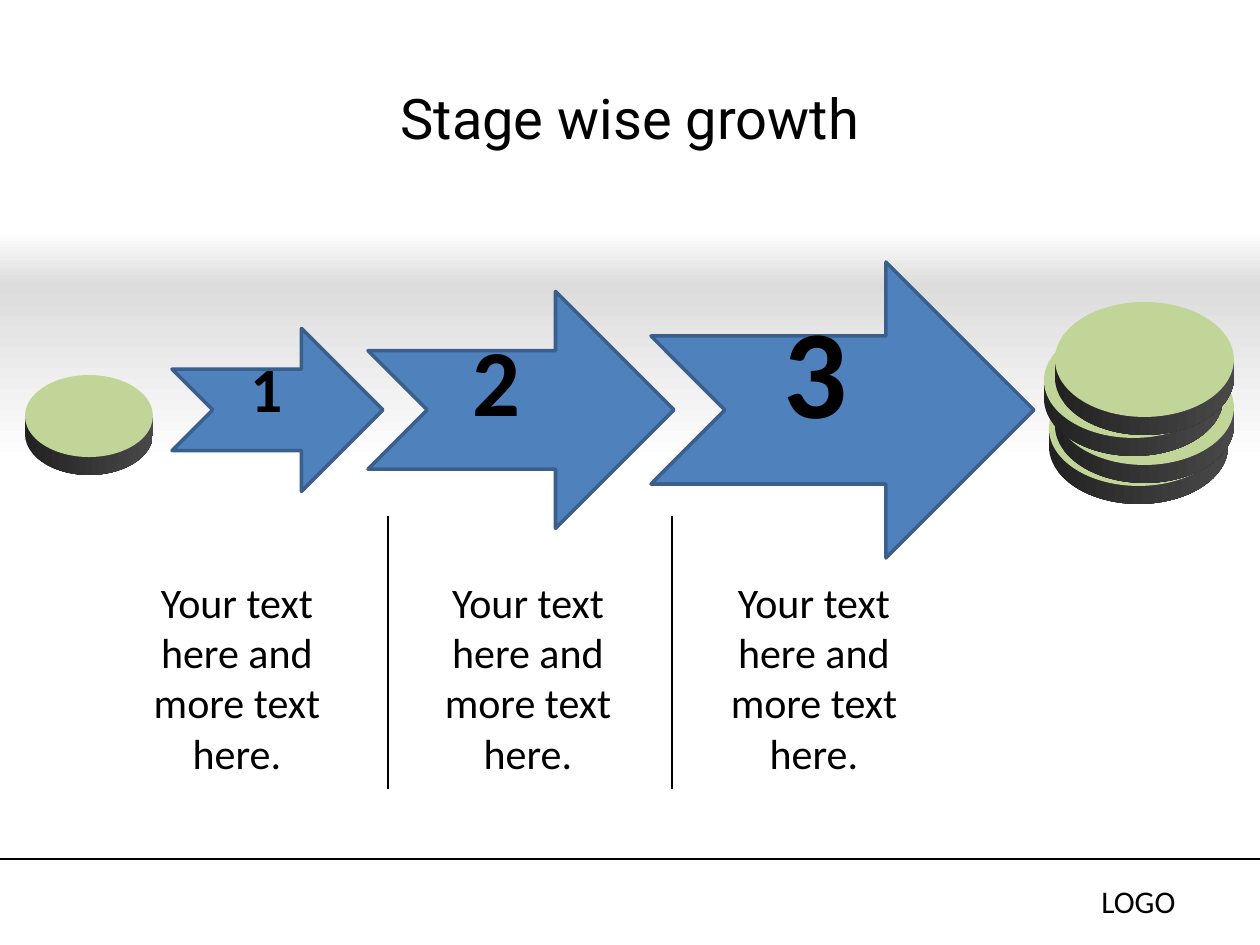
"""Build the stage wise growth slide."""
from lxml.etree import SubElement
from pptx import Presentation
from pptx.dml.color import RGBColor
from pptx.enum.shapes import MSO_CONNECTOR, MSO_SHAPE
from pptx.enum.text import MSO_ANCHOR, PP_ALIGN
from pptx.oxml.ns import qn
from pptx.util import Pt

PX = 914400 / 126
HEX = {"ink": "000000", "blue": "4F81BD", "edge": "3A5F8C", "face": "C1D598",
       "dark": "222222", "mid": "484848", "grey": "DCDCDC", "white": "FFFFFF"}
TITLE = "Stage wise growth"
BODY = "Your text here and more text here."
MID = 410
STAGES = [
    {"arrow": (172, 211, 163), "num": (238, 343, 53, 89), "size": 36, "body": 116},
    {"arrow": (368, 306, 237), "num": (460, 316, 66, 127), "size": 54, "body": 407},
    {"arrow": (651, 383, 296), "num": (771, 286, 79, 165), "size": 72, "body": 693},
]
BANDS = [(231, 54, 90), (284, 179, 270)]
RULES = [(0, 859, 1260, 859), (388, 516, 388, 789), (672, 516, 672, 789)]
COINS = [(25, 375, 128, 82), (1049, 371, 179, 115), (1055, 350, 179, 115),
         (1044, 323, 179, 115), (1055, 302, 179, 115)]
THICK = 18


def emu(*nums):
    return [round(n * PX) for n in nums]


def tint(name):
    return RGBColor.from_string(HEX[name])


def blend(fill, names, angle):
    fill.gradient()
    fill.gradient_angle = angle
    for stop, name in zip(fill.gradient_stops, names):
        stop.color.rgb = tint(name)


def shape(slide, kind, box, fill=None):
    item = slide.shapes.add_shape(kind, *emu(*box))
    item.shadow.inherit = False
    item.line.fill.background()
    if fill:
        item.fill.solid()
        item.fill.fore_color.rgb = tint(fill)
    return item


def style(para, size, font="Calibri", bold=False, align=PP_ALIGN.LEFT):
    para.alignment = align
    para.font.name = font
    para.font.size = Pt(size)
    para.font.bold = bold
    para.font.color.rgb = tint("ink")


def label(slide, text, box, size, wrap=True, **look):
    frame = slide.shapes.add_textbox(*emu(*box)).text_frame
    frame.word_wrap = wrap
    frame.text = text
    style(frame.paragraphs[0], size, **look)


def rule(slide, ends):
    line = slide.shapes.add_connector(MSO_CONNECTOR.STRAIGHT, *emu(*ends))
    line.line.color.rgb = tint("ink")
    line.line.width = Pt(0.75)
    SubElement(line._element.spPr, qn("a:effectLst"))


def coin(slide, left, top, wide, high):
    sides = [(MSO_SHAPE.OVAL, (left, top + THICK, wide, high)),
             (MSO_SHAPE.RECTANGLE, (left, top + high / 2, wide, THICK))]
    for kind, box in sides:
        blend(shape(slide, kind, box).fill, ("dark", "mid"), 0)
    shape(slide, MSO_SHAPE.OVAL, (left, top, wide, high), "face")


def main():
    deck = Presentation()
    deck.slide_width, deck.slide_height = emu(1260, 945)
    slide = deck.slides.add_slide(deck.slide_layouts[5])

    for top, high, angle in BANDS:
        band = shape(slide, MSO_SHAPE.RECTANGLE, (0, top, 1260, high))
        blend(band.fill, ("grey", "white"), angle)

    title = slide.shapes.title
    title.left, title.top, title.width, title.height = emu(63, 38, 1134, 158)
    title.text_frame.text = TITLE
    title.text_frame.vertical_anchor = MSO_ANCHOR.MIDDLE
    style(title.text_frame.paragraphs[0], 32, "Roboto", align=PP_ALIGN.CENTER)

    for stage in STAGES:
        left, wide, high = stage["arrow"]
        arrow = shape(slide, MSO_SHAPE.NOTCHED_RIGHT_ARROW,
                      (left, MID - high / 2, wide, high), "blue")
        arrow.line.color.rgb = tint("edge")
        arrow.line.width = Pt(2)
    for spot in COINS:
        coin(slide, *spot)
    for num, stage in enumerate(STAGES, 1):
        label(slide, str(num), stage["num"], stage["size"], wrap=False, bold=True)
        label(slide, BODY, (stage["body"], 570, 242, 165), 24, align=PP_ALIGN.CENTER)
    for ends in RULES:
        rule(slide, ends)
    label(slide, "LOGO", (1089, 876, 140, 50), 18)
    deck.save("out.pptx")


if __name__ == "__main__":
    main()
